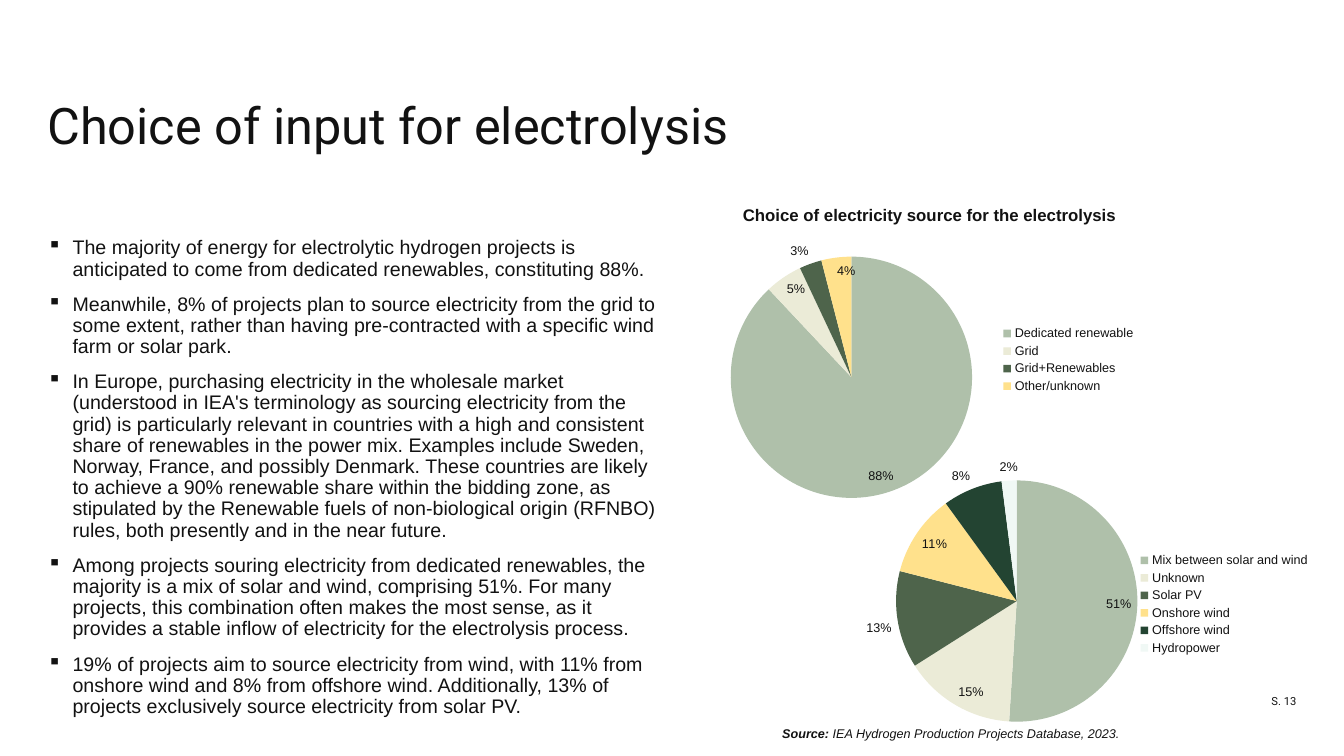
"""Build the slide on the choice of input for electrolysis."""
from dataclasses import dataclass

import pptx
import pptx.chart.data
import pptx.dml.color
import pptx.enum.chart
import pptx.enum.text
import pptx.oxml
import pptx.oxml.ns
import pptx.util

Inches = pptx.util.Inches
Align = pptx.enum.text.PP_ALIGN
Anchor = pptx.enum.text.MSO_ANCHOR
LabelPosition = pptx.enum.chart.XL_LABEL_POSITION


@dataclass(frozen=True)
class Theme:
    ink: str = "121212"
    slices: tuple = ("AFC0AA", "EBEBD7", "4E644B", "FFE18C", "234432", "F0F8F5")
    heading_font: str = "Roboto"
    body_font: str = "Arial"
    title_size: int = 36
    body_size: int = 14
    caption_size: int = 12
    label_size: int = 9
    number_size: int = 8
    line_spacing: float = 0.9
    paragraph_gap: int = 10
    indent: float = 0.25


def color(value):
    return pptx.dml.color.RGBColor.from_string(value)


def format_font(font, name, size, ink, bold=None, italic=None):
    font.name = name
    font.size = pptx.util.Pt(size)
    font.color.rgb = color(ink)
    font.bold = bold
    font.italic = italic


def write_span(para, text, **style):
    span = para.add_run()
    span.text = text
    format_font(span.font, **style)


def manual_layout(x, y, width, height, inner=False):
    target = '<c:layoutTarget val="inner"/>' if inner else ""
    return pptx.oxml.parse_xml(
        f'<c:layout {pptx.oxml.ns.nsdecls("c")}><c:manualLayout>{target}'
        '<c:xMode val="edge"/><c:yMode val="edge"/>'
        f'<c:x val="{x}"/><c:y val="{y}"/><c:w val="{width}"/><c:h val="{height}"/>'
        "</c:manualLayout></c:layout>")


class SlideBuilder:
    def __init__(self, slide, theme):
        self.slide = slide
        self.theme = theme

    def style(self, size, name=None, **extra):
        return dict(name=name or self.theme.body_font, size=size,
                    ink=self.theme.ink, **extra)

    def prepare_frame(self, shape, anchor, margins):
        frame = shape.text_frame
        frame.word_wrap = True
        frame.auto_size = pptx.enum.text.MSO_AUTO_SIZE.NONE
        frame.vertical_anchor = anchor
        frame.margin_left = frame.margin_right = Inches(margins[0])
        frame.margin_top = frame.margin_bottom = Inches(margins[1])
        return frame

    def title(self, text, left, top, width, height):
        box = self.slide.shapes.title
        box.left, box.top = Inches(left), Inches(top)
        box.width, box.height = Inches(width), Inches(height)
        para = self.prepare_frame(box, Anchor.BOTTOM, (0, 0)).paragraphs[0]
        para.alignment = Align.LEFT
        para.line_spacing = self.theme.line_spacing
        write_span(para, text, **self.style(self.theme.title_size, self.theme.heading_font))

    def text(self, spans, left, top, width, height, align=Align.LEFT,
             anchor=Anchor.TOP, margins=(0.1, 0.05)):
        box = self.slide.shapes.add_textbox(*map(Inches, (left, top, width, height)))
        para = self.prepare_frame(box, anchor, margins).paragraphs[0]
        para.alignment = align
        for text, style in spans:
            write_span(para, text, **style)

    def bullets(self, items, left, top, width, height):
        box = self.slide.shapes.add_textbox(*map(Inches, (left, top, width, height)))
        frame = self.prepare_frame(box, Anchor.TOP, (0, 0))
        for index, item in enumerate(items):
            para = frame.add_paragraph() if index else frame.paragraphs[0]
            properties = para._p.get_or_add_pPr()
            properties.set("marL", str(Inches(self.theme.indent)))
            properties.set("indent", str(-Inches(self.theme.indent)))
            properties.append(pptx.oxml.parse_xml(
                f'<a:buChar {pptx.oxml.ns.nsdecls("a")} char="▪"/>'))
            para.line_spacing = self.theme.line_spacing
            para.space_before = pptx.util.Pt(self.theme.paragraph_gap if index else 0)
            write_span(para, item, **self.style(self.theme.body_size))

    def pie(self, shares, left, top, plot, legend_area, outside):
        data = pptx.chart.data.CategoryChartData(number_format="0%")
        data.categories = list(shares)
        data.add_series("Series 1", list(shares.values()))
        chart = self.slide.shapes.add_chart(
            pptx.enum.chart.XL_CHART_TYPE.PIE, Inches(left), Inches(top),
            Inches(6.33), Inches(3.15), data).chart
        label_style = self.style(self.theme.label_size)
        format_font(chart.font, **label_style)
        chart.has_title = False
        chart.has_legend = True
        legend = chart.legend
        legend.position = pptx.enum.chart.XL_LEGEND_POSITION.RIGHT
        legend.include_in_layout = False
        format_font(legend.font, **label_style)
        self.place(legend._element, 1, manual_layout(*legend_area))
        plot_area = chart._chartSpace.chart.plotArea
        self.place(plot_area, 0, manual_layout(*plot, inner=True))

        pie_plot = chart.plots[0]
        pie_plot.vary_by_categories = True
        series = pie_plot.series[0]
        labels = series.data_labels
        labels.show_value = True
        labels.show_percentage = False
        labels.number_format = "0%"
        labels.number_format_is_linked = False
        labels.position = LabelPosition.INSIDE_END
        format_font(labels.font, **label_style)
        for index, fill_color in enumerate(self.theme.slices[:len(shares)]):
            point = series.points[index]
            point.format.fill.solid()
            point.format.fill.fore_color.rgb = color(fill_color)
            point.format.line.fill.background()
            if index in outside:
                format_font(point.data_label.font, **label_style)
                point.data_label.position = LabelPosition.OUTSIDE_END

    def place(self, parent, index, layout):
        for old in parent.findall(pptx.oxml.ns.qn("c:layout")):
            parent.remove(old)
        parent.insert(index, layout)


def main():
    deck = pptx.Presentation()
    deck.slide_width, deck.slide_height = Inches(13.33), Inches(7.5)
    theme = Theme()
    page = SlideBuilder(deck.slides.add_slide(deck.slide_layouts[5]), theme)

    page.title("Choice of input for electrolysis", 0.47, 0.48, 8.69, 1.06)
    page.bullets([
        "The majority of energy for electrolytic hydrogen projects is anticipated to come from dedicated renewables, constituting 88%.",
        "Meanwhile, 8% of projects plan to source electricity from the grid to some extent, rather than having pre-contracted with a specific wind farm or solar park.",
        "In Europe, purchasing electricity in the wholesale market (understood in IEA's terminology as sourcing electricity from the grid) is particularly relevant in countries with a high and consistent share of renewables in the power mix. Examples include Sweden, Norway, France, and possibly Denmark. These countries are likely to achieve a 90% renewable share within the bidding zone, as stipulated by the Renewable fuels of non-biological origin (RFNBO) rules, both presently and in the near future.",
        "Among projects souring electricity from dedicated renewables, the majority is a mix of solar and wind, comprising 51%. For many projects, this combination often makes the most sense, as it provides a stable inflow of electricity for the electrolysis process.",
        "19% of projects aim to source electricity from wind, with 11% from onshore wind and 8% from offshore wind. Additionally, 13% of projects exclusively source electricity from solar PV.",
    ], 0.47, 2.36, 6.13, 3.32)
    page.text([("S. 13", page.style(theme.number_size, theme.heading_font))],
              11.83, 6.63, 1.03, 0.39, Align.RIGHT, Anchor.BOTTOM, (0, 0))

    page.pie({"Dedicated renewable": 0.88, "Grid": 0.05, "Grid+Renewables": 0.03,
              "Other/unknown": 0.04},
             5.28, 2.2, (0.31, 0.11, 0.38, 0.76), (0.73, 0.32, 0.22, 0.23), {2})
    page.pie({"Mix between solar and wind": 0.51, "Unknown": 0.15, "Solar PV": 0.13,
              "Onshore wind": 0.11, "Offshore wind": 0.08, "Hydropower": 0.02},
             6.73, 4.42, (0.34, 0.11, 0.38, 0.76), (0.72, 0.33, 0.27, 0.34), {2, 4, 5})

    page.text([("Source:", page.style(theme.label_size, bold=True, italic=True)),
               (" IEA Hydrogen Production Projects Database, 2023.",
                page.style(theme.label_size, bold=False, italic=True))],
              7.66, 7.15, 3.61, 0.25)
    page.text([("Choice of electricity source for the electrolysis",
                page.style(theme.caption_size, bold=True))], 7.27, 1.98, 6.66, 0.3)
    deck.save("out.pptx")


if __name__ == "__main__":
    main()
